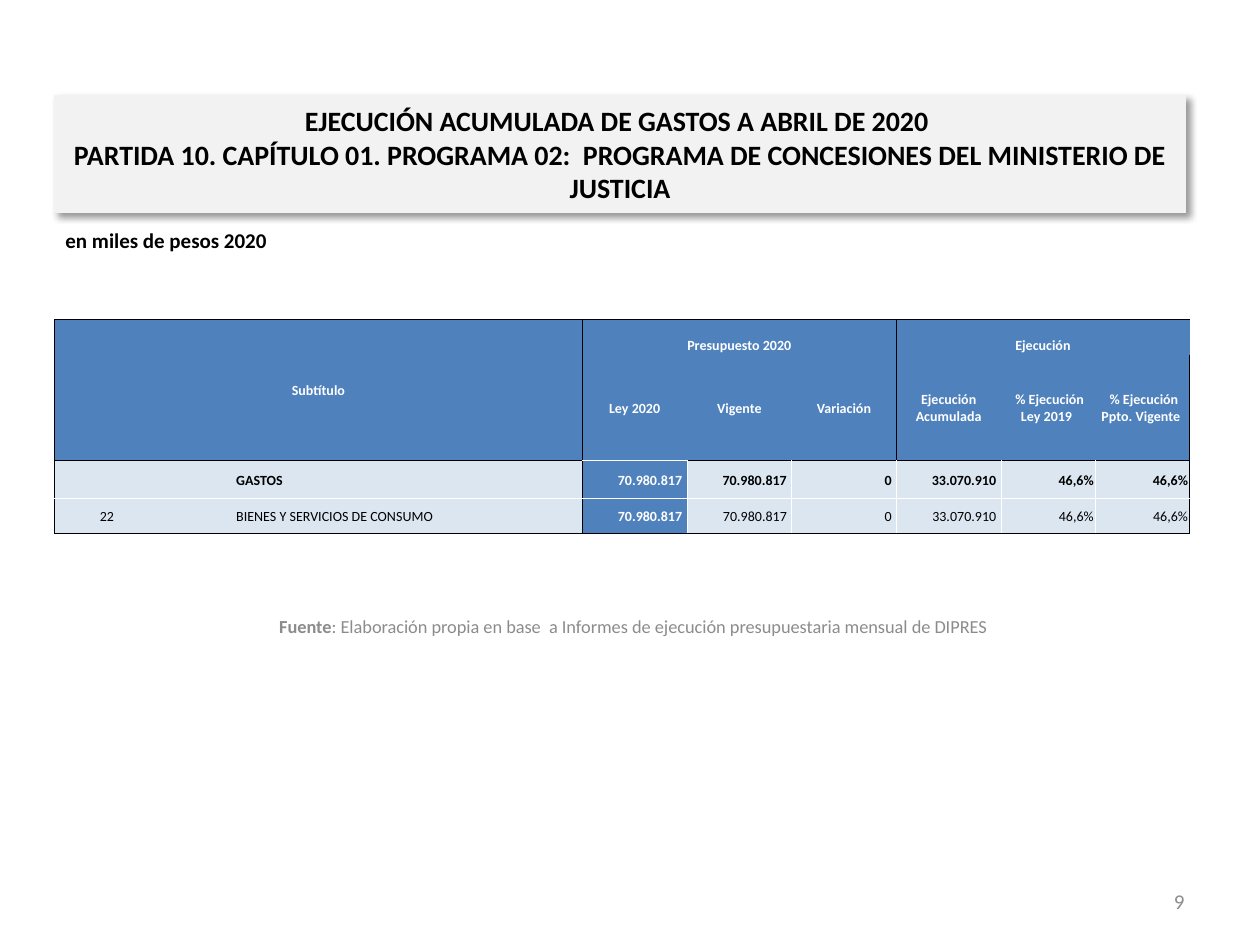
import lxml.etree
import pptx
import pptx.dml.color
import pptx.enum.text
import pptx.oxml.ns
import pptx.util

Cm, Pt = pptx.util.Cm, pptx.util.Pt
Align = pptx.enum.text.PP_ALIGN
Anchor = pptx.enum.text.MSO_ANCHOR
qn = pptx.oxml.ns.qn

HUES = {"black": "000000", "white": "FFFFFF", "gray": "8C8C8C",
        "panel": "F2F2F2", "head": "4F81BD", "body": "DCE6F1"}
COLS = [2.11, 0.76, 0.76, 7.01] + [2.11] * 4 + [1.9] * 2
ROWS = [0.71, 2.14, 0.75, 0.71]
SPANS = [(0, 0, 1, 3), (0, 4, 0, 6), (0, 7, 0, 9)]
CELLS = [
    ["Subtítulo", "", "", "", "Presupuesto 2020", "", "", "Ejecución", "", ""],
    ["", "", "", "", "Ley 2020", "Vigente", "Variación",
     "Ejecución Acumulada", " % Ejecución Ley 2019 ", " % Ejecución Ppto. Vigente "],
    ["", "", "", "GASTOS", "70.980.817 ", "70.980.817 ", "0 ",
     "33.070.910 ", "46,6%", "46,6%"],
    ["22", "", "", "BIENES Y SERVICIOS DE CONSUMO", "70.980.817 ", "70.980.817 ", "0 ",
     "33.070.910 ", "46,6%", "46,6%"],
]


def tint(name):
    return pptx.dml.color.RGBColor.from_string(HUES[name])


def assign(item, form):
    for key, value in form.items():
        setattr(item, key, value)


def upright(row, edge):
    """Hue of the vertical rule at a column edge, or None."""
    if edge in (0, 4, 10) or (row < 2 and edge == 7):
        return "black"
    return None if row < 2 or edge < 4 else "white"


def level(edge, col):
    """Hue of the horizontal rule at a row edge, or None."""
    if edge == 1:
        return None
    return "white" if edge == 3 or (edge == 2 and col == 4) else "black"


class Deck:
    def __init__(self):
        self.file = pptx.Presentation()
        assign(self.file, {"slide_width": Cm(25.4), "slide_height": Cm(19.05)})
        self.slide = self.file.slides.add_slide(self.file.slide_layouts[5])
        self.face = "Calibri"

    def words(self, para, text, size, hue, bold=False):
        """Add text to a paragraph in the deck's typeface."""
        run = para.add_run()
        run.text = text
        assign(run.font, {"name": self.face, "size": Pt(size), "bold": bold})
        run.font.color.rgb = tint(hue)

    def title(self, lines, box):
        shape = self.slide.shapes.title
        assign(shape, dict(zip(("left", "top", "width", "height"), map(Cm, box))))
        shape.fill.solid()
        shape.fill.fore_color.rgb = tint("panel")
        shape.line.color.rgb = tint("panel")
        shape.line.width = Pt(0.75)
        self.shade(shape)
        frame = shape.text_frame
        assign(frame, {"word_wrap": True, "vertical_anchor": Anchor.MIDDLE,
                       "auto_size": pptx.enum.text.MSO_AUTO_SIZE.SHAPE_TO_FIT_TEXT})
        para = frame.paragraphs[0]
        para.alignment = Align.CENTER
        for i, line in enumerate(lines):
            if i:
                para.add_line_break()
            self.words(para, line, 16, "black", True)

    def shade(self, shape):
        """Cast a soft shadow to the lower right."""
        sub = lxml.etree.SubElement
        effect = sub(shape.element.spPr, qn("a:effectLst"))
        cast = sub(effect, qn("a:outerShdw"), blurRad=str(Pt(4)), dist=str(Pt(3)),
                   dir="2700000", algn="tl", rotWithShape="0")
        color = sub(cast, qn("a:srgbClr"), val=HUES["black"])
        sub(color, qn("a:alpha"), val="40000")

    def label(self, box, parts, size, hue, align, anchor=Anchor.MIDDLE):
        """Add a one-line text box from (text, bold) parts."""
        frame = self.slide.shapes.add_textbox(*map(Cm, box)).text_frame
        assign(frame, {"word_wrap": True, "vertical_anchor": anchor})
        para = frame.paragraphs[0]
        para.alignment = align
        for text, bold in parts:
            self.words(para, text, size, hue, bold)

    def table(self, left, top):
        grid = self.slide.shapes.add_table(
            len(ROWS), len(COLS), Cm(left), Cm(top), Cm(sum(COLS)), Cm(sum(ROWS))).table
        assign(grid, {"first_row": False, "horz_banding": False})
        for col, width in zip(grid.columns, COLS):
            col.width = Cm(width)
        for row, height in zip(grid.rows, ROWS):
            row.height = Cm(height)
        for r, texts in enumerate(CELLS):
            for c, text in enumerate(texts):
                self.cell(grid.cell(r, c), r, c, text)
        for r, c, low, last in SPANS:
            grid.cell(r, c).merge(grid.cell(low, last))

    def cell(self, cell, r, c, text):
        head = r < 2
        dark = head or c == 4
        low = r == 0 and c > 3
        assign(cell, {"margin_left": Cm(0.03), "margin_right": Cm(0.03),
                      "margin_top": Cm(0.03), "margin_bottom": 0,
                      "vertical_anchor": Anchor.BOTTOM if low else Anchor.MIDDLE})
        cell.fill.solid()
        cell.fill.fore_color.rgb = tint("head" if dark else "body")
        para = cell.text_frame.paragraphs[0]
        if head or c == 0:
            para.alignment = Align.CENTER
        else:
            para.alignment = Align.JUSTIFY if c == 3 else Align.RIGHT
        if text:
            self.words(para, text, 8, "white" if dark else "black", dark or r == 2)
        else:
            lxml.etree.SubElement(para._p, qn("a:endParaRPr"), sz="800")
        self.rule(cell, {"L": upright(r, c), "R": upright(r, c + 1),
                         "T": level(r, c), "B": level(r + 1, c)})

    def rule(self, cell, sides):
        """Draw the cell's borders; a side without a hue gets no line."""
        props = cell._tc.get_or_add_tcPr()
        for i, (side, hue) in enumerate(sides.items()):
            line = lxml.etree.Element(qn("a:ln" + side), w=str(Pt(0.5)))
            if hue:
                fill = lxml.etree.SubElement(line, qn("a:solidFill"))
                lxml.etree.SubElement(fill, qn("a:srgbClr"), val=HUES[hue])
            else:
                lxml.etree.SubElement(line, qn("a:noFill"))
            props.insert(i, line)


def main():
    deck = Deck()
    deck.title(["EJECUCIÓN ACUMULADA DE GASTOS A ABRIL DE 2020 ",
                "PARTIDA 10. CAPÍTULO 01. PROGRAMA 02:  PROGRAMA DE CONCESIONES "
                "DEL MINISTERIO DE JUSTICIA"], (1.1, 1.93, 22.8, 2.35))
    deck.label((1.07, 4.47, 22.86, 0.86), [("en miles de pesos 2020", True)],
               12, "black", Align.LEFT, Anchor.TOP)
    deck.table(1.1, 6.44)
    deck.label((1.1, 12.12, 23.34, 1.02),
               [("Fuente", True), (": Elaboración propia en base  a Informes de "
                                   "ejecución presupuestaria mensual de DIPRES", False)],
               10.5, "gray", Align.CENTER)
    deck.label((18.2, 17.65, 5.93, 1.02), [("9", False)], 12, "gray", Align.RIGHT)
    deck.file.save("out.pptx")


if __name__ == "__main__":
    main()
